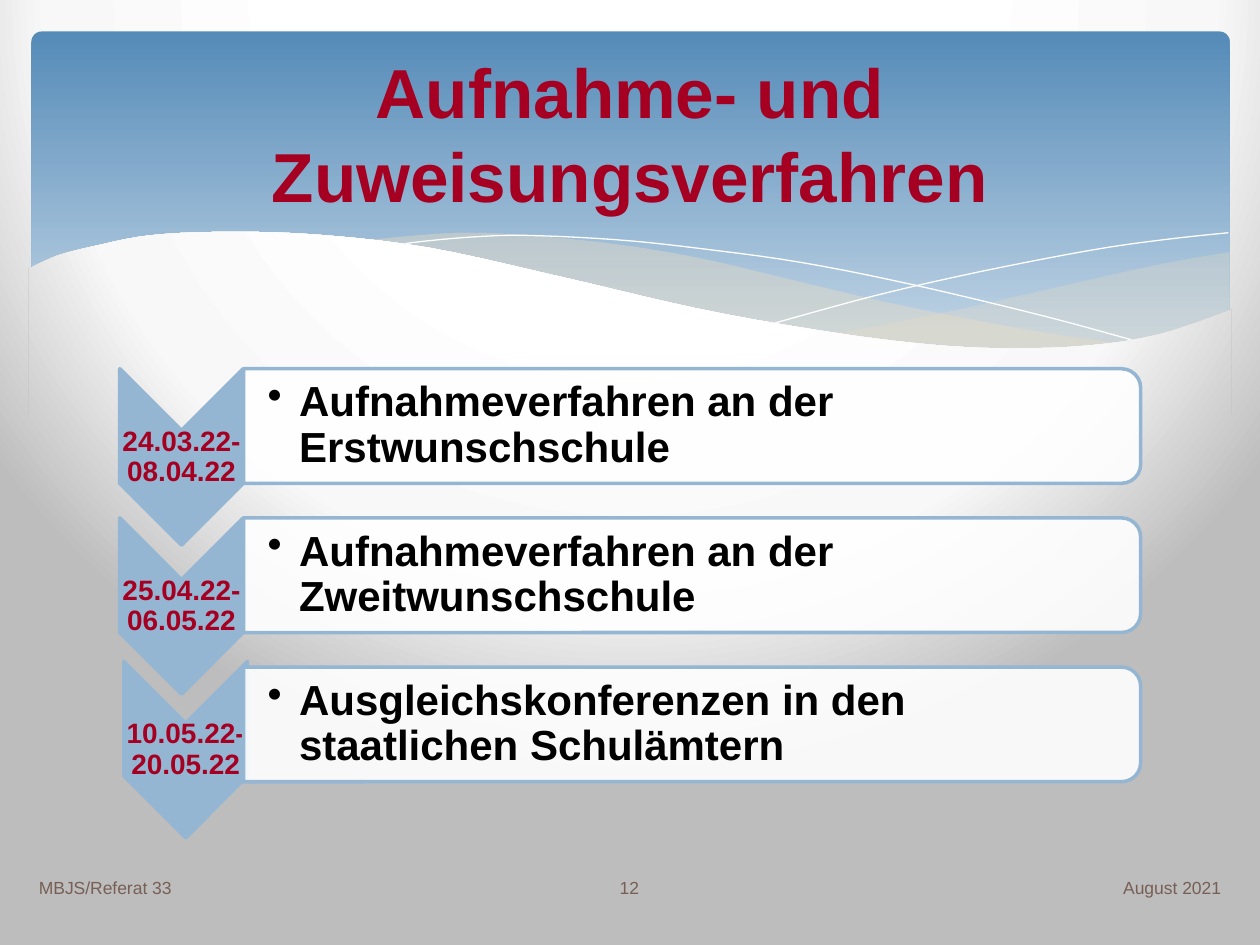
"""Build the slide on the admission and allocation schedule."""
from pptx import Presentation
from pptx.dml.color import RGBColor
from pptx.enum.shapes import MSO_SHAPE as Kind
from pptx.enum.text import MSO_ANCHOR as Anchor, MSO_AUTO_SIZE as Auto, PP_ALIGN as Align
from pptx.oxml import parse_xml
from pptx.oxml.ns import nsdecls, qn
from pptx.oxml.xmlchemy import OxmlElement as Node
from pptx.util import Pt

FONT = "Arial"
RED = RGBColor(0xA5, 0x00, 0x21)
BLACK = RGBColor(0, 0, 0)
WHITE = RGBColor(0xFF, 0xFF, 0xFF)
BROWN = RGBColor(0x77, 0x5F, 0x55)
SKY = RGBColor(0x94, 0xB6, 0xD2)
DEEP = RGBColor(0x55, 0x8B, 0xB8)
PALE = RGBColor(0xBF, 0xD3, 0xE4)
SAND = RGBColor(0xEB, 0xDD, 0xC3)
GLOW = [(40, WHITE), (74, RGBColor(0xF8, 0xF8, 0xF8)), (100, RGBColor(0xBD, 0xBD, 0xBD))]

TAN_TOP = [(702.7, 144), (663, 151), (620, 160.5), (561, 174), (508, 185), (476, 191)]
TAN_LOW = [(476, 191), (518, 196), (554, 199), (586, 200), (621, 198), (652, 193.5),
           (678, 186.5), (702.7, 178)]
MID_TOP = [(643, 196.5), (603, 191), (558, 183), (508, 173), (453, 160), (400, 147.5),
           (352, 139.5), (302, 134.5), (260, 133), (206, 137.5)]
MID_LOW = [(206, 137.5), (261, 146), (323, 160), (382, 173), (433, 183.5), (479, 191.5),
           (520, 197), (565, 200), (603, 200), (643, 196.5)]
FALL = [(222.5, 140.5), (241, 138), (269, 135.5), (300, 134.5), (352, 137), (400, 142),
        (458, 150), (523, 163), (598, 181), (653, 196)]
RISE = [(441.5, 185), (500, 169), (559, 155.5), (623.5, 143), (665, 137), (702, 133)]
CREST = [(703.5, 177), (662.5, 191), (621, 197.5), (571, 199), (522.5, 196), (466.5, 188.5),
         (399.5, 176.5), (322, 158.5), (245, 141.5), (180, 134), (127.5, 132.5),
         (85.5, 134.5), (54.5, 140.5), (33, 146), (16.5, 153.5)]
BASE = [(16.5, 237), (703.5, 237)]

STEPS = [("24.03.22-08.04.22", "Aufnahmeverfahren an der Erstwunschschule", 0, 0),
         ("25.04.22-06.05.22", "Aufnahmeverfahren an der Zweitwunschschule", 0, 0),
         ("10.05.22-20.05.22", "Ausgleichskonferenzen in den staatlichen Schulämtern", 2.4, -3.2)]
TOP, PITCH = 210.7, 85.25


def smooth(knots, count=5):
    """Return points on a Catmull-Rom curve through the knots."""
    ends = [knots[0], *knots, knots[-1]]
    points = []
    for a, b, c, d in zip(ends, ends[1:], ends[2:], ends[3:]):
        for step in range(count):
            t = step / count
            points.append(tuple(
                q + t * (r - p) / 2 + t ** 2 * (2 * p - 5 * q + 4 * r - s) / 2
                + t ** 3 * (3 * q - p - 3 * r + s) / 2
                for p, q, r, s in zip(a, b, c, d)))
    return points + [knots[-1]]


def fade(shape, share):
    """Make the solid fill of a shape partly opaque."""
    alpha = Node("a:alpha")
    alpha.set("val", str(share * 1000))
    shape.fill._xPr.find(qn("a:solidFill"))[0].append(alpha)


def outline(slide, points, closed=True):
    """Add a freeform through the points."""
    path = [(Pt(x), Pt(y)) for x, y in points]
    pen = slide.shapes.build_freeform(*path[0])
    pen.add_line_segments(path[1:], close=closed)
    shape = pen.convert_to_shape()
    shape.shadow.inherit = False
    shape.line.fill.background()
    return shape


def veil(slide, points, share):
    """Add a see-through sand wave."""
    shape = outline(slide, points)
    shape.fill.solid()
    shape.fill.fore_color.rgb = SAND
    fade(shape, share)


def thread(slide, knots):
    """Add a white hairline curve."""
    shape = outline(slide, smooth(knots), False)
    shape.fill.background()
    shape.line.color.rgb = WHITE
    shape.line.width = Pt(0)


def backdrop(slide):
    """Set the radial background of the slide."""
    stops = "".join(f'<a:gs pos="{pos * 1000}"><a:srgbClr val="{tone}"/></a:gs>'
                    for pos, tone in GLOW)
    slide._element.cSld.insert(0, parse_xml(
        f'<p:bg {nsdecls("p", "a")}><p:bgPr><a:gradFill rotWithShape="1">'
        f'<a:gsLst>{stops}</a:gsLst><a:path path="circle">'
        '<a:fillToRect l="20000" t="-40000" r="20000" b="140000"/></a:path>'
        '</a:gradFill><a:effectLst/></p:bgPr></p:bg>'))


def banner(slide):
    """Add the blue header with its waves."""
    head = slide.shapes.add_shape(Kind.ROUNDED_RECTANGLE, Pt(18), Pt(18), Pt(684.7), Pt(194.4))
    head.adjustments[0] = 0.03
    head.shadow.inherit = False
    head.line.fill.background()
    head.fill.gradient()
    head.fill.gradient_angle = 270
    for stop, pos, tone in zip(head.fill.gradient_stops, (0, 0.9), (DEEP, PALE)):
        stop.position = pos
        stop.color.rgb = tone
    veil(slide, smooth(TAN_TOP) + smooth(TAN_LOW), 29)
    veil(slide, smooth(MID_TOP) + smooth(MID_LOW), 40)
    thread(slide, FALL)
    thread(slide, RISE)
    wave = outline(slide, smooth(CREST) + BASE)
    wave._element.set("useBgFill", "1")


def style(para, size, color, bold=False, align=None):
    """Format a paragraph."""
    para.alignment = align
    font = para.font
    font.name, font.size, font.bold = FONT, Pt(size), bold
    font.color.rgb = color


def label(slide, text, box, pads=None):
    """Add a text box and return its paragraph."""
    frame = slide.shapes.add_textbox(*map(Pt, box)).text_frame
    frame.word_wrap = True
    frame.vertical_anchor = Anchor.MIDDLE
    if pads:
        frame.margin_left = Pt(pads[0])
        frame.margin_top = frame.margin_right = frame.margin_bottom = Pt(pads[1])
    para = frame.paragraphs[0]
    para.text = text
    return para


def turned(slide, kind, box, color):
    """Add a shape turned by 90 degrees that covers the given box."""
    x, y, w, h = box
    shape = slide.shapes.add_shape(
        kind, Pt(x + (w - h) / 2), Pt(y + (h - w) / 2), Pt(h), Pt(w))
    shape.rotation = 90
    shape.shadow.inherit = False
    shape.fill.solid()
    shape.fill.fore_color.rgb = color
    shape.line.color.rgb = SKY
    shape.line.width = Pt(2)
    return shape


def bullet(para):
    """Give a paragraph a hanging round bullet."""
    props = para._p.get_or_add_pPr()
    props.set("marL", str(Pt(18)))
    props.set("indent", str(-Pt(18)))
    mark = Node("a:buChar")
    mark.set("char", "•")
    props.insert_element_before(mark, "a:tabLst", "a:defRPr", "a:extLst")


def stage(slide, y, dates, text, dx, dy):
    """Add one step: a chevron with dates and a bar with text."""
    turned(slide, Kind.CHEVRON, (68.4 + dx, y + dy, 70.6, 100.8), SKY)
    para = label(slide, dates, (68.4 + dx, y + dy + 35.5, 70.6, 30.2), (0.8, 0.8))
    style(para, 16, RED, True, Align.CENTER)
    para.line_spacing = 0.9
    bar = turned(slide, Kind.ROUND_2_SAME_RECTANGLE, (139.2, y, 512.6, 65.5), WHITE)
    fade(bar, 90)
    para = label(slide, text, (139.2, y + 3.2, 509.8, 59), (13.7, 1.2))
    style(para, 24, BLACK, True)
    para.line_spacing = 0.9
    bullet(para)


def heading(slide, text):
    """Fill and place the title."""
    title = slide.shapes.title
    title.left, title.top, title.width, title.height = map(Pt, (36, 26.6, 648, 98.6))
    frame = title.text_frame
    frame.text = text
    frame.auto_size = Auto.NONE
    frame.vertical_anchor = Anchor.MIDDLE
    style(frame.paragraphs[0], 39.6, RED, True, Align.CENTER)
    slide.shapes._spTree.append(title._element)


def main():
    """Build and save the deck."""
    deck = Presentation()
    deck.slide_width, deck.slide_height = Pt(720), Pt(540)
    slide = deck.slides.add_slide(deck.slide_layouts[5])
    backdrop(slide)
    banner(slide)
    for row, step in enumerate(STEPS):
        stage(slide, TOP + row * PITCH, *step)
    for text, x, w, align in (("August 2021", 406.8, 298, Align.RIGHT),
                              ("MBJS/Referat 33", 15.1, 298, Align.LEFT),
                              ("12", 313.9, 91.4, Align.CENTER)):
        style(label(slide, text, (x, 492.5, w, 28.8)), 10, BROWN, align=align)
    heading(slide, "Aufnahme- und Zuweisungsverfahren")
    deck.save("out.pptx")


if __name__ == "__main__":
    main()
